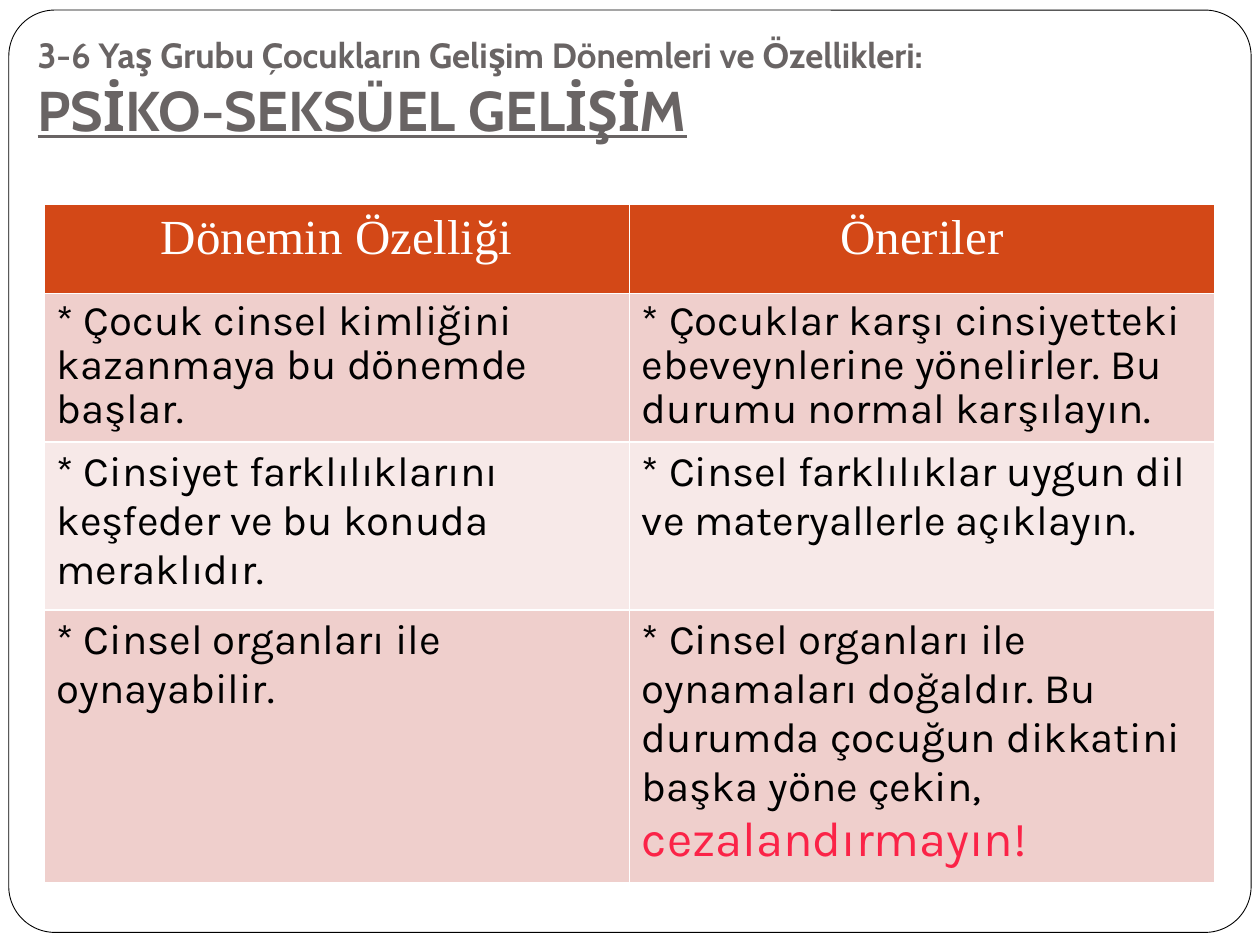
from lxml import etree
from pptx import Presentation, util as u
from pptx.dml.color import RGBColor
from pptx.enum import shapes, text
from pptx.oxml.ns import qn

WIDE, HIGH = 10, 7.5
TITLE = [("3-6 Yaş Grubu Çocukların Gelişim Dönemleri ve Özellikleri:", {"size": 20}),
         ("PSİKO-SEKSÜEL GELİŞİM", {"size": 32, "underline": True})]
HEADS = ["Dönemin Özelliği", "Öneriler"]
ROWS = [
    ("* Çocuk cinsel kimliğini kazanmaya bu dönemde başlar.",
     "* Çocuklar karşı cinsiyetteki ebeveynlerine yönelirler. Bu durumu normal karşılayın."),
    ("* Cinsiyet farklılıklarını keşfeder ve bu konuda meraklıdır.",
     "* Cinsel farklılıklar uygun dil ve materyallerle açıklayın."),
    ("* Cinsel organları ile oynayabilir.",
     "* Cinsel organları ile oynamaları doğaldır. Bu durumda çocuğun dikkatini "
     "başka yöne çekin, "),
]
ALERT = "cezalandırmayın!"
TALL = [0.71, 1.15, 1.33, 2.11]
FILLS = ["D34817", "EFCFCC", "F7E9E8", "EFCFCC"]
TOP = {"name": "Cabin", "bold": True, "color": "696464"}
HEAD = {"name": "Times New Roman", "size": 28, "bold": False, "color": "FFFFFF"}
BODY = {"name": "Karla", "size": 24, "bold": False, "color": "000000"}
LOUD = {**BODY, "size": 28, "color": "FB2347"}


def rgb(code):
    return RGBColor.from_string(code)


def paint(fill, code):
    fill.solid()
    fill.fore_color.rgb = rgb(code)


def write(para, words, style):
    run = para.add_run()
    run.text = words
    for key, val in style.items():
        if key == "color":
            run.font.color.rgb = rgb(val)
        else:
            setattr(run.font, key, u.Pt(val) if key == "size" else val)


def edge(cell, code, width):
    props = cell._tc.get_or_add_tcPr()
    for side in "LRTB":
        line = etree.SubElement(props, qn(f"a:ln{side}"), w=str(u.Pt(width)))
        fill = etree.SubElement(line, qn("a:solidFill"))
        etree.SubElement(fill, qn("a:srgbClr"), val=code)


deck = Presentation()
deck.slide_width, deck.slide_height = u.Inches(WIDE), u.Inches(HIGH)
slide = deck.slides.add_slide(deck.slide_layouts[6])

frame = slide.shapes.add_shape(shapes.MSO_SHAPE.ROUNDED_RECTANGLE,
                               *map(u.Inches, (0.07, 0.08, 9.86, 7.32)))
frame.adjustments[0] = 0.05
frame.shadow.inherit = False
paint(frame.fill, "FFFFFF")
paint(frame.line.fill, "000000")
frame.line.width = u.Pt(0.5)

title = slide.shapes.add_textbox(*map(u.Inches, (0.2, 0.05, 9.8, 1.18))).text_frame
for key, val in {"word_wrap": True, "vertical_anchor": text.MSO_ANCHOR.BOTTOM,
                 "margin_bottom": u.Inches(0.1)}.items():
    setattr(title, key, val)
para = title.paragraphs[0]
for i, (words, style) in enumerate(TITLE):
    if i:
        para.add_line_break()
    write(para, words, {**TOP, **style})

grid = slide.shapes.add_table(len(TALL), len(HEADS),
                              *map(u.Inches, (0.35, 1.62, 9.29, sum(TALL)))).table
for r, (words, tall, fill) in enumerate(zip([HEADS, *ROWS], TALL, FILLS)):
    grid.rows[r].height = u.Inches(tall)
    for c, word in enumerate(words):
        cell = grid.cell(r, c)
        edge(cell, "FFFFFF", 1)
        paint(cell.fill, fill)
        para = cell.text_frame.paragraphs[0]
        write(para, word, BODY if r else HEAD)
        if r == 0:
            para.alignment = text.PP_ALIGN.CENTER
        elif r == 1:
            para.line_spacing = 0.9
write(para, ALERT, LOUD)

deck.save("out.pptx")
